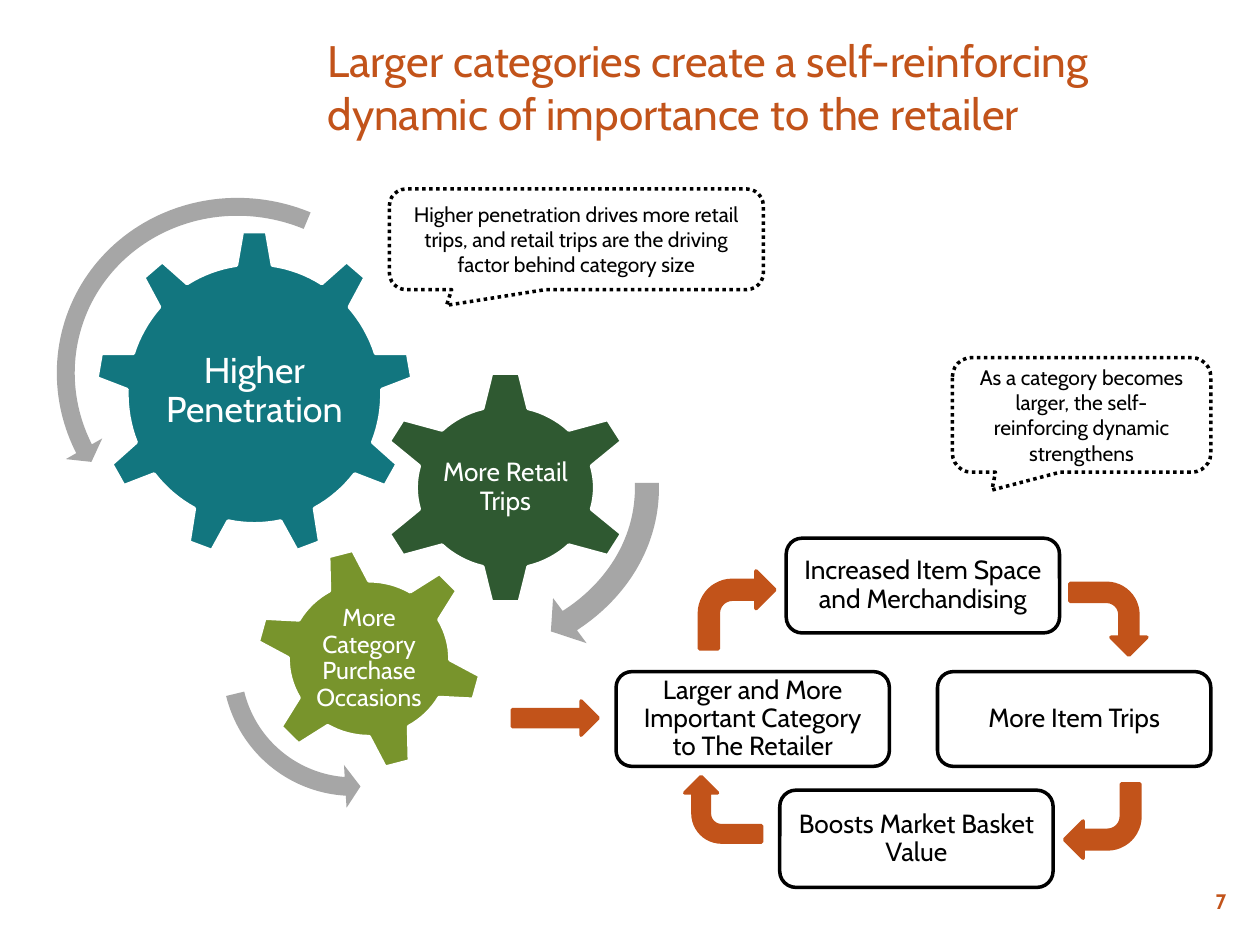
from dataclasses import dataclass
from math import cos, radians, sin

from pptx import Presentation
from pptx.dml.color import RGBColor
from pptx.enum.dml import MSO_LINE
from pptx.enum.shapes import MSO_SHAPE
from pptx.enum.text import MSO_ANCHOR, MSO_AUTO_SIZE, PP_ALIGN
from pptx.util import Cm, Pt


@dataclass(frozen=True)
class Theme:
    font: str = "Cabin"
    rust: str = "C2531A"
    teal: str = "12767F"
    pine: str = "2F5931"
    lime: str = "78942C"
    gray: str = "A6A6A6"
    white: str = "FFFFFF"
    black: str = "000000"
    head: float = 25.2
    large: float = 20.5
    body: float = 15
    small: float = 14
    note: float = 12
    rule: float = 2


class Deck:
    def __init__(self, theme):
        self.theme = theme
        self.show = Presentation()
        self.show.slide_width = Cm(25.4)
        self.show.slide_height = Cm(19.05)
        self.slide = self.show.slides.add_slide(self.show.slide_layouts[5])

    def label(self, shape, text, size, color, align=PP_ALIGN.CENTER,
              space=None, bold=False, anchor=MSO_ANCHOR.MIDDLE):
        frame = shape.text_frame
        frame.word_wrap = True
        frame.auto_size = MSO_AUTO_SIZE.NONE
        frame.vertical_anchor = anchor
        para = frame.paragraphs[0]
        para.alignment = align
        para.line_spacing = space
        run = para.add_run()
        run.text = text
        run.font.name = self.theme.font
        run.font.size = Pt(size)
        run.font.bold = bold
        run.font.color.rgb = RGBColor.from_string(color)

    def paint(self, shape, fill, line=None):
        shape.shadow.inherit = False
        shape.fill.solid()
        shape.fill.fore_color.rgb = RGBColor.from_string(fill)
        if line:
            shape.line.color.rgb = RGBColor.from_string(line)
            shape.line.width = Pt(self.theme.rule)
        else:
            shape.line.fill.background()

    def shape(self, kind, place, fill, line=None, turn=0, tweaks=()):
        item = self.slide.shapes.add_shape(kind, *map(Cm, place))
        item.rotation = turn
        for index, value in enumerate(tweaks):
            item.adjustments[index] = value
        self.paint(item, fill, line)
        return item

    def title(self, text, place):
        item = self.slide.shapes.title
        item.left, item.top, item.width, item.height = map(Cm, place)
        self.label(item, text, self.theme.head, self.theme.rust, PP_ALIGN.LEFT)

    def number(self, text, place):
        item = self.slide.shapes.add_textbox(*map(Cm, place))
        self.label(item, text, self.theme.note, self.theme.rust,
                   PP_ALIGN.RIGHT, bold=True, anchor=MSO_ANCHOR.TOP)

    def gear(self, text, size, fill, mid, root, tip, teeth, wide, thin, start, pad):
        def spot(radius, angle):
            turn = radians(angle)
            return (Cm(mid[0] + radius[0] * sin(turn)),
                    Cm(mid[1] - radius[1] * cos(turn)))

        step = 360 / teeth
        parts = 8
        points = []
        for tooth in range(teeth):
            axis = start + tooth * step
            points += [spot(tip, axis - thin), spot(tip, axis + thin)]
            gap = step - 2 * wide
            points += [spot(root, axis + wide + gap * part / parts)
                       for part in range(parts + 1)]
        form = self.slide.shapes.build_freeform(*points[0])
        form.add_line_segments(points[1:], close=True)
        item = form.convert_to_shape()
        self.paint(item, fill, self.theme.white)
        frame = item.text_frame
        frame.margin_left = frame.margin_right = Cm(pad)
        self.label(item, text, size, self.theme.white, space=0.9)

    def swirl(self, kind, place, turn, tweaks, flip=False):
        item = self.shape(kind, place, self.theme.gray, None, turn, tweaks)
        if flip:
            item._element.spPr.xfrm.set("flipV", "1")

    def arrow(self, kind, place, turn):
        self.shape(kind, place, self.theme.rust, self.theme.rust, turn)

    def box(self, text, left, top, high=1.91):
        item = self.shape(MSO_SHAPE.ROUNDED_RECTANGLE, (left, top, 5.51, high),
                          self.theme.white, self.theme.black)
        self.label(item, text, self.theme.body, self.theme.black, space=0.9)

    def bubble(self, text, place):
        item = self.shape(MSO_SHAPE.ROUNDED_RECTANGULAR_CALLOUT, place,
                          self.theme.white, self.theme.black,
                          tweaks=(-0.347, 0.656, 0.167))
        item.line.dash_style = MSO_LINE.ROUND_DOT
        self.label(item, text, self.theme.note, self.theme.black)


def main():
    theme = Theme()
    deck = Deck(theme)
    deck.title("Larger categories create a self-reinforcing dynamic of "
               "importance to the retailer", (6.35, 0.76, 17.78, 1.98))
    deck.number("7", (23.7, 17.78, 1.27, 0.64))

    deck.gear("Higher Penetration", theme.large, theme.teal, (5.13, 7.94),
              (2.57, 2.62), (3.19, 3.28), 9, 8.1, 4.4, 0, 1.28)
    deck.gear("More Retail Trips", theme.body, theme.pine, (10.19, 9.83),
              (1.8, 1.65), (2.56, 2.32), 6, 14.7, 6.3, 0, 0.93)
    deck.gear("More Category Purchase Occasions", theme.small, theme.lime,
              (7.44, 13.28), (1.63, 1.57), (2.26, 2.21), 6, 14.6, 6.4, 45.3, 0.94)

    deck.swirl(MSO_SHAPE.CIRCULAR_ARROW, (0.89, 3.76, 7.95, 7.67), 197.3,
               (0.047, 2.99, 25.131, 158.679, 0.055), flip=True)
    deck.swirl(MSO_SHAPE.LEFT_CIRCULAR_ARROW, (4.24, 10.52, 5.77, 5.77), 279,
               (0.065, 4.3, 104.891, 148.378, 0.075))
    deck.swirl(MSO_SHAPE.CIRCULAR_ARROW, (4.14, 5.69, 9.47, 8.08), 184.9,
               (0.06, 3.941, 133.138, 105.082, 0.07))

    deck.arrow(MSO_SHAPE.DOWN_ARROW, (10.85, 13.61, 0.69, 1.73), 270)
    deck.box("Larger and More Important Category to The Retailer", 12.42, 13.54)
    deck.box("Increased Item Space and Merchandising", 15.85, 10.85)
    deck.box("Boosts Market Basket Value", 15.72, 15.93, 1.96)
    deck.box("More Item Trips", 18.9, 13.54)

    bends = [(14.1, 11.51, 1.52, 1.57), (21.62, 11.71, 1.45, 1.55),
             (21.46, 15.8, 1.52, 1.5), (13.92, 15.54, 1.32, 1.55)]
    for index, place in enumerate(bends):
        deck.arrow(MSO_SHAPE.BENT_ARROW, place, index * 90)

    deck.bubble("Higher penetration drives more retail trips, and retail trips "
                "are the driving factor behind category size",
                (7.85, 3.81, 7.54, 2.03))
    deck.bubble("As a category becomes larger, the self-reinforcing dynamic "
                "strengthens", (19.2, 7.21, 5.21, 2.31))
    deck.show.save("out.pptx")


if __name__ == "__main__":
    main()
